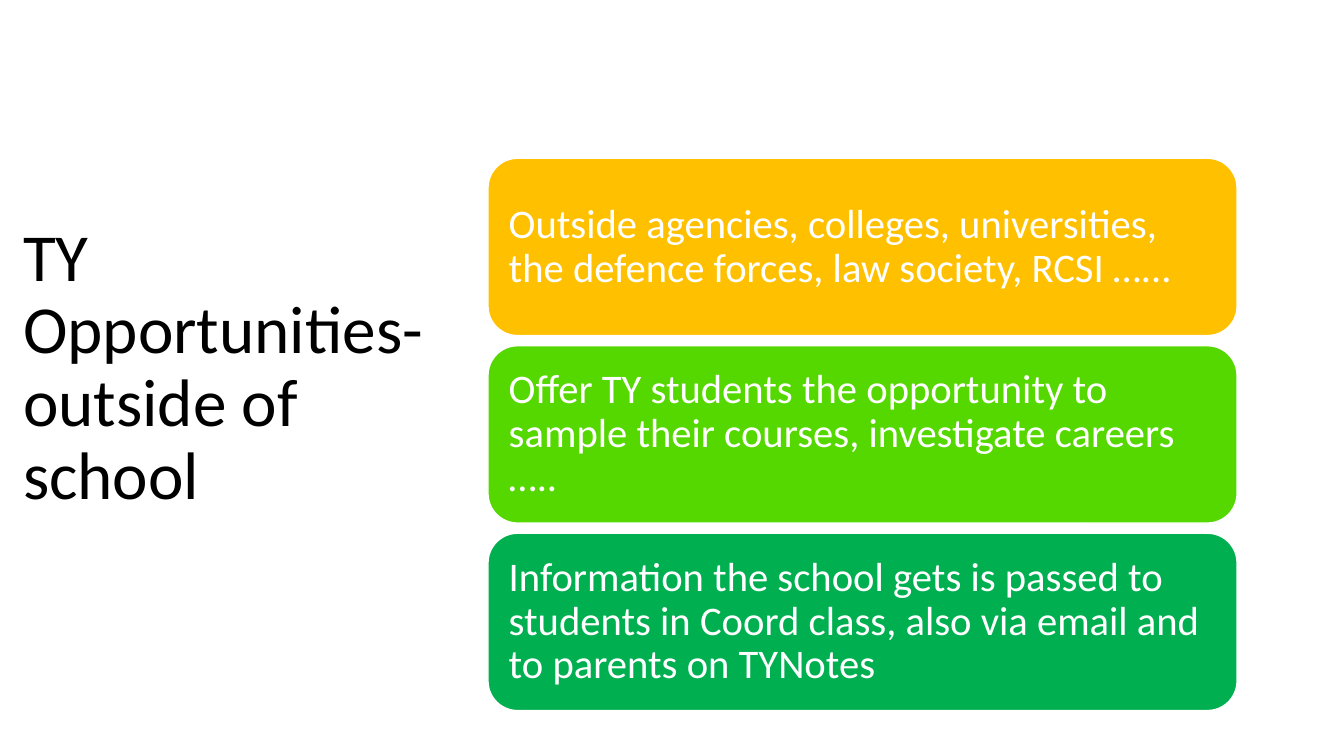
from dataclasses import dataclass

from pptx import Presentation
from pptx.dml.color import RGBColor
from pptx.enum.shapes import MSO_SHAPE
from pptx.enum.text import MSO_ANCHOR, PP_ALIGN
from pptx.util import Emu, Pt

EMU_PER_PX = 9144


@dataclass(frozen=True)
class Theme:
    font: str = "Calibri"
    title_size: int = 48
    card_size: int = 29
    ink: str = "000000"
    paper: str = "FFFFFF"
    card_fills: tuple = ("FFC000", "55D800", "00B050")


THEME = Theme()
TITLE = "TY Opportunities- outside of school"
OPPORTUNITIES = (
    "Outside agencies, colleges, universities, the defence forces, law society, RCSI …...",
    "Offer TY students the opportunity to sample their courses, investigate careers …..",
    "Information the school gets is passed to students in Coord class, also via email and "
    "to parents on TYNotes",
)


def px(length):
    return Emu(length * EMU_PER_PX)


def rgb(colour):
    return RGBColor.from_string(colour)


def write(frame, wording, size, colour, inset_x, inset_y):
    frame.word_wrap = True
    frame.vertical_anchor = MSO_ANCHOR.MIDDLE
    frame.margin_left = frame.margin_right = px(inset_x)
    frame.margin_top = frame.margin_bottom = px(inset_y)
    paragraph = frame.paragraphs[0]
    paragraph.text = wording
    paragraph.alignment = PP_ALIGN.LEFT
    paragraph.line_spacing = 0.9
    paragraph.font.name = THEME.font
    paragraph.font.size = Pt(size)
    paragraph.font.color.rgb = rgb(colour)


def add_title(slide, left, top, width, height):
    title = slide.shapes.add_textbox(px(left), px(top), px(width), px(height))
    write(title.text_frame, TITLE, THEME.title_size, THEME.ink, 10, 5)


def add_opportunities(slide, left, top, width, height, gap=10):
    count = len(OPPORTUNITIES)
    card_height = (height - gap * (count - 1)) // count
    for index, (wording, fill) in enumerate(zip(OPPORTUNITIES, THEME.card_fills)):
        card_top = top + index * (card_height + gap)
        card = slide.shapes.add_shape(
            MSO_SHAPE.ROUNDED_RECTANGLE,
            px(left), px(card_top), px(width), px(card_height),
        )
        card.shadow.inherit = False
        card.fill.solid()
        card.fill.fore_color.rgb = rgb(fill)
        card.line.color.rgb = rgb(THEME.paper)
        card.line.width = Pt(1)
        write(card.text_frame, wording, THEME.card_size, THEME.paper, 12, 12)


def main():
    presentation = Presentation()
    presentation.slide_width = px(1333)
    presentation.slide_height = px(750)
    slide = presentation.slides.add_slide(presentation.slide_layouts[6])
    add_title(slide, 13, 213, 429, 305)
    add_opportunities(slide, 484, 157, 743, 550)
    presentation.save("out.pptx")


if __name__ == "__main__":
    main()
